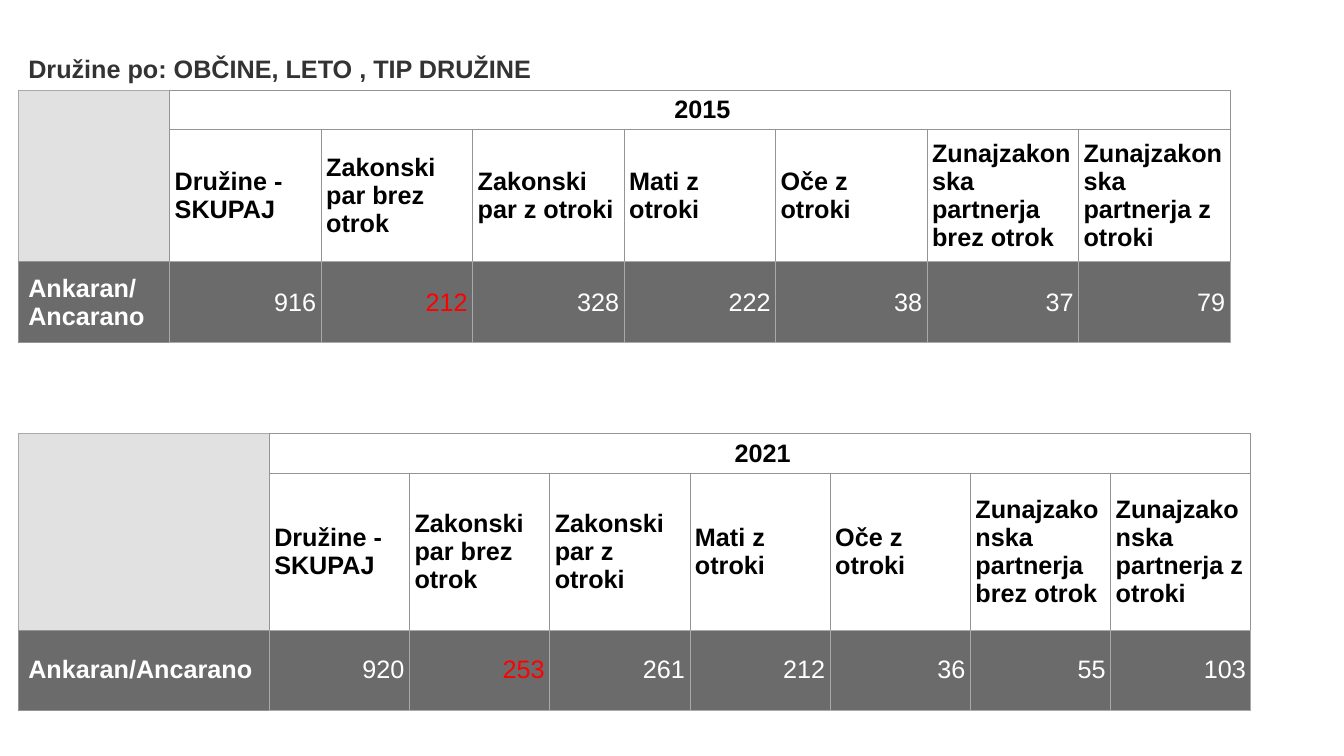
from dataclasses import dataclass

from lxml.etree import SubElement
from pptx import Presentation
from pptx.dml.color import RGBColor
from pptx.enum.text import MSO_ANCHOR, PP_ALIGN
from pptx.oxml.ns import qn
from pptx.slide import Slide
from pptx.table import Table, _Cell
from pptx.util import Pt

WHITE, BLACK, RED = "FFFFFF", "000000", "FF0000"
TITLE_GREY, CORNER_GREY, ROW_GREY = "333333", "E1E1E1", "6B6B6B"
HEADER_LINE, DATA_LINE = "949494", "A9A9A9"
TITLE = "Družine po: OBČINE, LETO , TIP DRUŽINE"
MUNICIPALITY = "Ankaran/Ancarano"
FAMILY_TYPES = (
    "Družine - SKUPAJ",
    "Zakonski par brez otrok",
    "Zakonski par z otroki",
    "Mati z otroki",
    "Oče z otroki",
    "Zunajzakonska partnerja brez otrok",
    "Zunajzakonska partnerja z otroki",
)
HIGHLIGHTED_COLUMN = 2
LEFT = 13


@dataclass(frozen=True)
class YearTable:
    year: str
    top: float
    name_width: float
    value_width: float
    row_heights: tuple[float, ...]
    counts: tuple[int, ...]
    title: str = ""


YEAR_TABLES = (
    YearTable("2015", 28.1, 108.2, 108.2, (36.2, 28.5, 94.3, 57.8),
              (916, 212, 328, 222, 38, 37, 79), TITLE),
    YearTable("2021", 309.6, 179.3, 100.2, (28.5, 112, 57.2),
              (920, 253, 261, 212, 36, 55, 103)),
)


def color(value: str) -> RGBColor:
    return RGBColor.from_string(value)


def write_text(cell: _Cell, text: str, *, font_color: str = BLACK,
               bold: bool = True, align: PP_ALIGN = PP_ALIGN.LEFT,
               insets: tuple[float, ...] = (3.6, 3.6, 3.6, 3.6)) -> None:
    """Write text in a cell; insets run left, top, right, bottom."""
    cell.vertical_anchor = MSO_ANCHOR.MIDDLE
    (cell.margin_left, cell.margin_top,
     cell.margin_right, cell.margin_bottom) = map(Pt, insets)
    para = cell.text_frame.paragraphs[0]
    para.alignment = align
    span = para.add_run()
    span.text = text
    span.font.name = "Arial"
    span.font.size = Pt(18)
    span.font.bold = bold
    span.font.color.rgb = color(font_color)


def paint_cell(cell: _Cell, fill: str, **edges: str) -> None:
    """Draw the named edges (L, R, T, B), then fill the cell."""
    properties = cell._tc.get_or_add_tcPr()
    for side in "LRTB":
        if side in edges:
            line = SubElement(properties, qn(f"a:ln{side}"), w=str(Pt(0.75)))
            solid = SubElement(line, qn("a:solidFill"))
            SubElement(solid, qn("a:srgbClr"), val=edges[side])
    cell.fill.solid()
    cell.fill.fore_color.rgb = color(fill)


def paint_box(cell: _Cell, fill: str, line: str) -> None:
    paint_cell(cell, fill, L=line, R=line, T=line, B=line)


def add_title_row(table: Table, title: str) -> None:
    for cell in table.rows[0].cells:
        paint_cell(cell, WHITE, B=DATA_LINE)
    table.cell(0, 0).merge(table.cell(0, len(FAMILY_TYPES)))
    write_text(table.cell(0, 0), title, font_color=TITLE_GREY,
               insets=(7.2, 11.5, 3.6, 3.6))


def add_year_table(page: Slide, data: YearTable) -> None:
    columns = len(FAMILY_TYPES) + 1
    width = data.name_width + data.value_width * len(FAMILY_TYPES)
    frame = page.shapes.add_table(
        len(data.row_heights), columns, Pt(LEFT), Pt(data.top),
        Pt(width), Pt(sum(data.row_heights)))
    table = frame.table
    table.first_row = table.horz_banding = False
    for index, column in enumerate(table.columns):
        column.width = Pt(data.value_width if index else data.name_width)
    for row, height in zip(table.rows, data.row_heights):
        row.height = Pt(height)

    if data.title:
        add_title_row(table, data.title)
    year_row = 1 if data.title else 0
    type_row, count_row = year_row + 1, year_row + 2

    # Empty corner and year heading
    for row in (year_row, type_row):
        paint_cell(table.cell(row, 0), CORNER_GREY,
                   L=DATA_LINE, T=DATA_LINE, R=HEADER_LINE, B=HEADER_LINE)
    for column in range(1, columns):
        paint_box(table.cell(year_row, column), WHITE, HEADER_LINE)
    table.cell(year_row, 0).merge(table.cell(type_row, 0))
    table.cell(year_row, 1).merge(table.cell(year_row, columns - 1))
    write_text(table.cell(year_row, 1), data.year, align=PP_ALIGN.CENTER,
               insets=(7.2, 3.6, 3.6, 3.6))

    # Municipality name
    name_cell = table.cell(count_row, 0)
    paint_cell(name_cell, ROW_GREY,
               L=HEADER_LINE, T=HEADER_LINE, R=DATA_LINE, B=HEADER_LINE)
    write_text(name_cell, MUNICIPALITY, font_color=WHITE, insets=(7.2,) * 4)

    # Family types and their counts
    for column, (family, count) in enumerate(zip(FAMILY_TYPES, data.counts), 1):
        type_cell = table.cell(type_row, column)
        paint_box(type_cell, WHITE, HEADER_LINE)
        write_text(type_cell, family)
        count_cell = table.cell(count_row, column)
        paint_box(count_cell, ROW_GREY, DATA_LINE)
        write_text(count_cell, str(count), bold=False, align=PP_ALIGN.RIGHT,
                   font_color=RED if column == HIGHLIGHTED_COLUMN else WHITE)


def main() -> None:
    deck = Presentation()
    deck.slide_width, deck.slide_height = Pt(960), Pt(540)
    page = deck.slides.add_slide(deck.slide_layouts[6])
    for data in YEAR_TABLES:
        add_year_table(page, data)
    deck.save("out.pptx")


if __name__ == "__main__":
    main()
